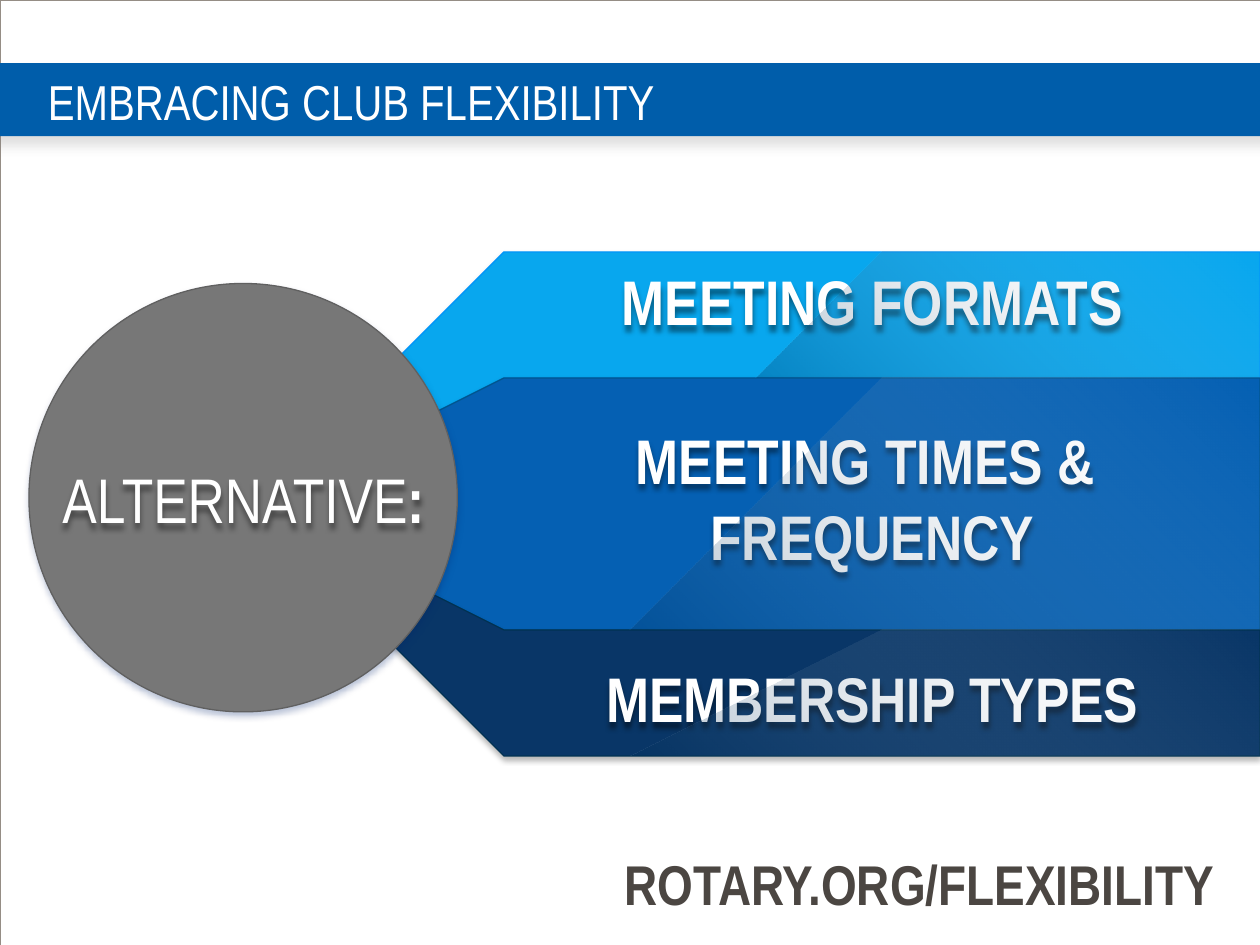
import pptx
import pptx.util
from lxml import etree
from pptx.dml.color import RGBColor
from pptx.enum.shapes import MSO_SHAPE
from pptx.enum.text import MSO_ANCHOR, MSO_AUTO_SIZE, PP_ALIGN
from pptx.oxml.ns import qn
from pptx.util import Inches

FONT = "Arial Narrow"
WHITE = RGBColor(0xFF, 0xFF, 0xFF)
BLACK = RGBColor(0, 0, 0)
FRAME_LINE = RGBColor(0x95, 0x8D, 0x85)
BANNER_BLUE = RGBColor(0x00, 0x5D, 0xAA)
BANNER_SHADOW = RGBColor(0x80, 0x80, 0x80)
HUB_GRAY = RGBColor(0x77, 0x77, 0x77)
HUB_LINE = RGBColor(0x60, 0x60, 0x60)
HUB_SHADOW = RGBColor(0x00, 0x24, 0x6C)
GLOSS_BLUE = RGBColor(0x01, 0x31, 0x5D)
ADDRESS_BROWN = RGBColor(0x4B, 0x46, 0x42)

# Content
TITLE = "EMBRACING CLUB FLEXIBILITY"
ADDRESS = "ROTARY.ORG/FLEXIBILITY"
HUB_LABEL = [("ALTERNATIVE", False), (":", True)]

BAND_RIGHT, BAND_BEND, BAND_TIP = 9.75, 4.44, 1.92
BANDS = [
    dict(label="MEETING FORMATS", top=1.63, bottom=3.39, tip=4.27,
         label_box=(2.08, 0.61),
         fill=RGBColor(0x08, 0xA7, 0xEE), line=RGBColor(0x01, 0x95, 0xF9),
         gloss=dict(left=5.58, bend=7.43, right=9.77, top=1.7, bottom=3.13)),
    dict(label="MEETING TIMES & \nFREQUENCY", top=3.13, bottom=4.78, tip=3.97,
         label_box=(3.34, 1.21),
         fill=RGBColor(0x05, 0x60, 0xB3), line=RGBColor(0x01, 0x56, 0x8F),
         gloss=dict(left=5.33, bend=7.28, right=9.74, top=3.14, bottom=4.71)),
    dict(label="MEMBERSHIP TYPES", top=4.72, bottom=6.28, tip=3.96,
         label_box=(5.23, 0.61),
         fill=RGBColor(0x09, 0x36, 0x67), line=RGBColor(0x01, 0x32, 0x53),
         gloss=dict(left=4.67, bend=6.92, right=9.76, top=4.72, bottom=6.29)),
]


def add_color(parent, color, opacity):
    node = etree.SubElement(parent, qn("a:srgbClr"), val=str(color))
    etree.SubElement(node, qn("a:alpha"), val=str(opacity * 1000))


def add_shadow(shape, color, opacity, blur, distance):
    shape.shadow.inherit = False
    effects = shape.element.spPr.find(qn("a:effectLst"))
    outer = etree.SubElement(
        effects, qn("a:outerShdw"), blurRad=str(int(pptx.util.Pt(blur))),
        dist=str(int(pptx.util.Pt(distance))), dir="5400000",
        algn="ctr", rotWithShape="0")
    add_color(outer, color, opacity)


def style(shape, fill=None, line=None, width=0.75, shadow=None):
    shape.shadow.inherit = False
    if fill is None:
        shape.fill.background()
    else:
        shape.fill.solid()
        shape.fill.fore_color.rgb = fill
    if line is None:
        shape.line.fill.background()
    else:
        shape.line.color.rgb = line
        shape.line.width = pptx.util.Pt(width)
    if shadow:
        add_shadow(shape, *shadow)


def place(shape, box):
    shape.left, shape.top, shape.width, shape.height = map(Inches, box)


def write(shape, text, size=36, color=WHITE, bold=False, align=PP_ALIGN.CENTER,
          anchor=MSO_ANCHOR.MIDDLE, inset=0):
    """Write a string, or a list of (text, bold) runs, as one paragraph."""
    frame = shape.text_frame
    frame.word_wrap = True
    frame.auto_size = MSO_AUTO_SIZE.NONE
    frame.vertical_anchor = anchor
    if inset is not None:
        frame.margin_left = frame.margin_right = Inches(inset)
        frame.margin_top = frame.margin_bottom = Inches(inset)
    paragraph = frame.paragraphs[0]
    properties = paragraph._p.get_or_add_pPr()
    properties.set("marL", "0")
    properties.set("indent", "0")
    etree.SubElement(properties, qn("a:buNone"))
    paragraph.alignment = align
    paragraph.space_before = pptx.util.Pt(0)
    for part, part_bold in [(text, bold)] if isinstance(text, str) else text:
        for number, line in enumerate(part.split("\n")):
            if number:
                paragraph.add_line_break()
            run = paragraph.add_run()
            run.text = line
            run.font.name = FONT
            run.font.size = pptx.util.Pt(size)
            run.font.bold = part_bold
            run.font.color.rgb = color


def add_polygon(shapes, points):
    builder = shapes.build_freeform(*points[0], scale=float(Inches(1)))
    builder.add_line_segments(points[1:], close=True)
    return builder.convert_to_shape()


def add_label(shapes, box, text, **text_format):
    label = shapes.add_textbox(*map(Inches, box))
    write(label, text, **text_format)
    add_shadow(label, BLACK, 43, 3, 3)


def add_gloss(shapes, left, bend, right, top, bottom):
    gloss = add_polygon(shapes, [(left, bottom), (right, bottom),
                                 (right, top), (bend, top)])
    style(gloss)
    properties = gloss.element.spPr
    gradient = etree.Element(qn("a:gradFill"), rotWithShape="1")
    stops = etree.SubElement(gradient, qn("a:gsLst"))
    for position, color, opacity in [(0, GLOSS_BLUE, 29), (100, WHITE, 0)]:
        stop = etree.SubElement(stops, qn("a:gs"), pos=str(position * 1000))
        add_color(stop, color, opacity)
    etree.SubElement(gradient, qn("a:lin"), ang=str(315 * 60000), scaled="0")
    properties.replace(properties.find(qn("a:noFill")), gradient)


def main():
    deck = pptx.Presentation()
    deck.slide_width, deck.slide_height = Inches(10), Inches(7.5)
    slide = deck.slides.add_slide(deck.slide_layouts[1])
    shapes = slide.shapes

    # Page frame and title banner
    frame = shapes.add_shape(MSO_SHAPE.RECTANGLE, 0, 0,
                             deck.slide_width, deck.slide_height)
    style(frame, line=FRAME_LINE, width=0.13)
    banner = shapes.add_shape(MSO_SHAPE.RECTANGLE, Inches(-0.08), Inches(0.5),
                              Inches(10.17), Inches(0.58))
    style(banner, BANNER_BLUE, shadow=(BANNER_SHADOW, 25, 7, 4.8))

    # Bands fanning out from the hub
    for item in BANDS:
        top, bottom = item["top"], item["bottom"]
        band = add_polygon(shapes, [
            (BAND_RIGHT, top), (BAND_RIGHT, bottom), (BAND_BEND, bottom),
            (BAND_TIP, item["tip"]), (BAND_BEND, top)])
        style(band, item["fill"], item["line"], shadow=(BLACK, 27, 3, 2))

    # Hub circle
    hub = shapes.add_shape(MSO_SHAPE.OVAL, Inches(0.23), Inches(2.25),
                           Inches(3.4), Inches(3.4))
    style(hub, HUB_GRAY, HUB_LINE, shadow=(HUB_SHADOW, 27, 4, 2))
    add_label(shapes, (0.33, 3.65, 3.21, 0.61), HUB_LABEL)

    # Band labels
    for item in BANDS:
        label_top, label_height = item["label_box"]
        add_label(shapes, (4.49, label_top, 4.87, label_height),
                  item["label"], bold=True)

    # Title and web address, raised above the banner
    title, address = shapes.title, slide.placeholders[1]
    place(title, (0.38, 0.51, 9.58, 0.58))
    write(title, TITLE, size=28, align=PP_ALIGN.LEFT)
    place(address, (4.49, 6.69, 5.25, 0.64))
    write(address, ADDRESS, size=32, color=ADDRESS_BROWN, bold=True,
          align=PP_ALIGN.RIGHT, anchor=MSO_ANCHOR.TOP, inset=None)
    for placeholder in (title, address):
        shapes.element.append(placeholder.element)

    # Gloss over each band
    for item in BANDS:
        add_gloss(shapes, **item["gloss"])

    deck.save("out.pptx")


if __name__ == "__main__":
    main()
